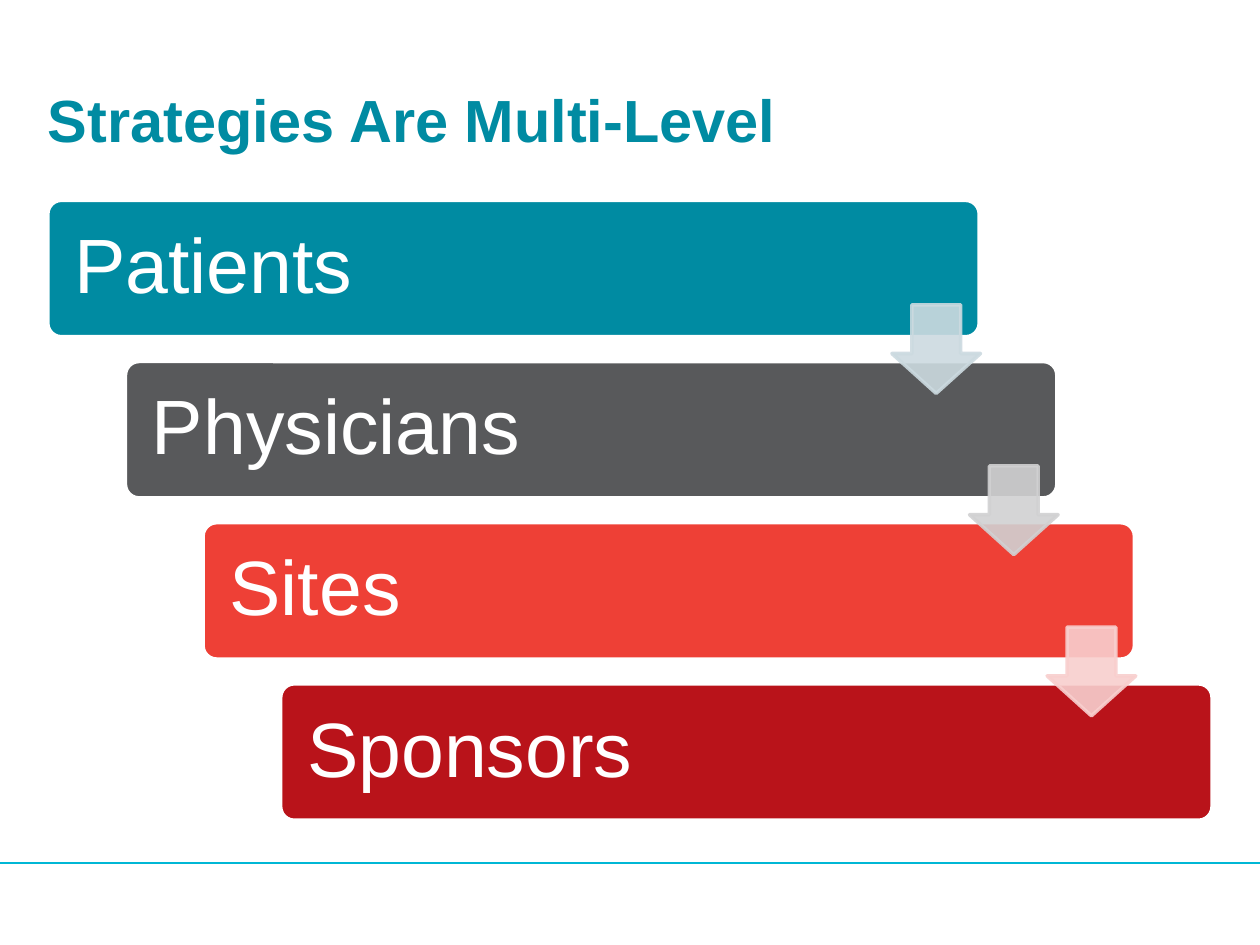
import dataclasses

import lxml.etree
import pptx
import pptx.dml.color
import pptx.enum.shapes
import pptx.enum.text
import pptx.oxml.ns
import pptx.util

SHAPES = pptx.enum.shapes.MSO_SHAPE
SLIDE_WIDTH, SLIDE_HEIGHT = 10, 7.5


@dataclasses.dataclass(frozen=True)
class Theme:
    """Colours and type sizes of the slide."""

    font: str = "Arial"
    title_size: int = 34
    level_size: int = 44
    title: str = "008BA2"
    paper: str = "FFFFFF"
    rule: str = "00B7D5"
    levels: tuple = ("008BA2", "58595B", "EE4036", "B9131A")
    arrows: tuple = ("CCDAE0", "D1D1D2", "F8CFCE")
    arrow_opacity: int = 90


@dataclasses.dataclass(frozen=True)
class Box:
    """A rectangle in inches."""

    left: float
    top: float
    width: float
    height: float

    def inches(self):
        """Return the four lengths for python-pptx."""
        return [pptx.util.Inches(length) for length in dataclasses.astuple(self)]

    def inset(self, margin):
        """Return the box shrunk by a margin on every side."""
        return Box(self.left + margin, self.top + margin,
                   self.width - 2 * margin, self.height - 2 * margin)


THEME = Theme()


def rgb(colour):
    """Return a colour object for a hex string."""
    return pptx.dml.color.RGBColor.from_string(colour)


def add_filled(slide, kind, box, fill, line=None, adjustments=()):
    """Add a flat preset shape with an optional outline."""
    shape = slide.shapes.add_shape(kind, *box.inches())
    shape.shadow.inherit = False
    for index, value in enumerate(adjustments):
        shape.adjustments[index] = value
    shape.fill.solid()
    shape.fill.fore_color.rgb = rgb(fill)
    if line is None:
        shape.line.fill.background()
    else:
        shape.line.color.rgb = rgb(line)
        shape.line.width = pptx.util.Pt(2)
    return shape


def add_text(slide, box, text, size, colour, margin=0, bold=False, spacing=1.0):
    """Add one vertically centred line of text."""
    frame = slide.shapes.add_textbox(*box.inches()).text_frame
    frame.word_wrap = True
    frame.vertical_anchor = pptx.enum.text.MSO_ANCHOR.MIDDLE
    frame.margin_left = frame.margin_right = pptx.util.Inches(margin)
    frame.margin_top = frame.margin_bottom = pptx.util.Inches(margin)
    paragraph = frame.paragraphs[0]
    paragraph.line_spacing = spacing
    run = paragraph.add_run()
    run.text = text
    run.font.name = THEME.font
    run.font.size = pptx.util.Pt(size)
    run.font.bold = bold
    run.font.color.rgb = rgb(colour)


def set_opacity(shape, percent):
    """Make the fill and outline of a shape partly transparent."""
    tag = pptx.oxml.ns.qn("a:srgbClr")
    for colour in shape.element.spPr.iter(tag):
        alpha = lxml.etree.SubElement(colour, pptx.oxml.ns.qn("a:alpha"))
        alpha.set("val", str(percent * 1000))


def add_footer(slide, box):
    """Place the footer band and the rule along its top."""
    add_filled(slide, SHAPES.RECTANGLE, box, THEME.paper)
    height = pptx.util.Inches(box.top + 0.02)
    rule = slide.shapes.add_connector(
        pptx.enum.shapes.MSO_CONNECTOR.STRAIGHT,
        pptx.util.Inches(box.left), height,
        pptx.util.Inches(box.left + box.width), height)
    rule.line.color.rgb = rgb(THEME.rule)
    rule.line.width = pptx.util.Pt(0.75)
    lxml.etree.SubElement(rule.element.spPr, pptx.oxml.ns.qn("a:effectLst"))


def add_title(slide, box, text):
    """Place the slide title."""
    add_text(slide, box, text, THEME.title_size, THEME.title, bold=True)


def add_staircase(slide, box, labels):
    """Place bars stepping down to the right, joined by arrows."""
    width, height = box.width * 0.8, box.height * 0.22
    steps = len(labels) - 1
    step_x, step_y = (box.width - width) / steps, (box.height - height) / steps
    bars = [Box(box.left + index * step_x, box.top + index * step_y, width, height)
            for index in range(len(labels))]
    for bar, label, colour in zip(bars, labels, THEME.levels):
        add_filled(slide, SHAPES.ROUNDED_RECTANGLE, bar, colour, THEME.paper, [0.1])
        add_text(slide, bar.inset(0.03), label, THEME.level_size, THEME.paper,
                 margin=0.18, spacing=0.9)
    size = height * 0.65
    for bar, colour in zip(bars, THEME.arrows):
        gap_middle = bar.top + (height + step_y) / 2
        place = Box(bar.left + width - size + 0.01, gap_middle - size / 2, size, size)
        arrow = add_filled(slide, SHAPES.DOWN_ARROW, place, colour, colour, [0.55, 0.45])
        set_opacity(arrow, THEME.arrow_opacity)


def main():
    """Build and save the slide."""
    presentation = pptx.Presentation()
    presentation.slide_width = pptx.util.Inches(SLIDE_WIDTH)
    presentation.slide_height = pptx.util.Inches(SLIDE_HEIGHT)
    slide = presentation.slides.add_slide(presentation.slide_layouts[6])
    margin = 0.38
    content = SLIDE_WIDTH - 2 * margin
    footer = 0.67
    add_footer(slide, Box(0, SLIDE_HEIGHT - footer, SLIDE_WIDTH, footer))
    add_title(slide, Box(margin, 0.52, content, 0.84), "Strategies Are Multi-Level")
    add_staircase(slide, Box(margin, 1.59, content, 4.92),
                  ["Patients", "Physicians", "Sites", "Sponsors"])
    presentation.save("out.pptx")


if __name__ == "__main__":
    main()
